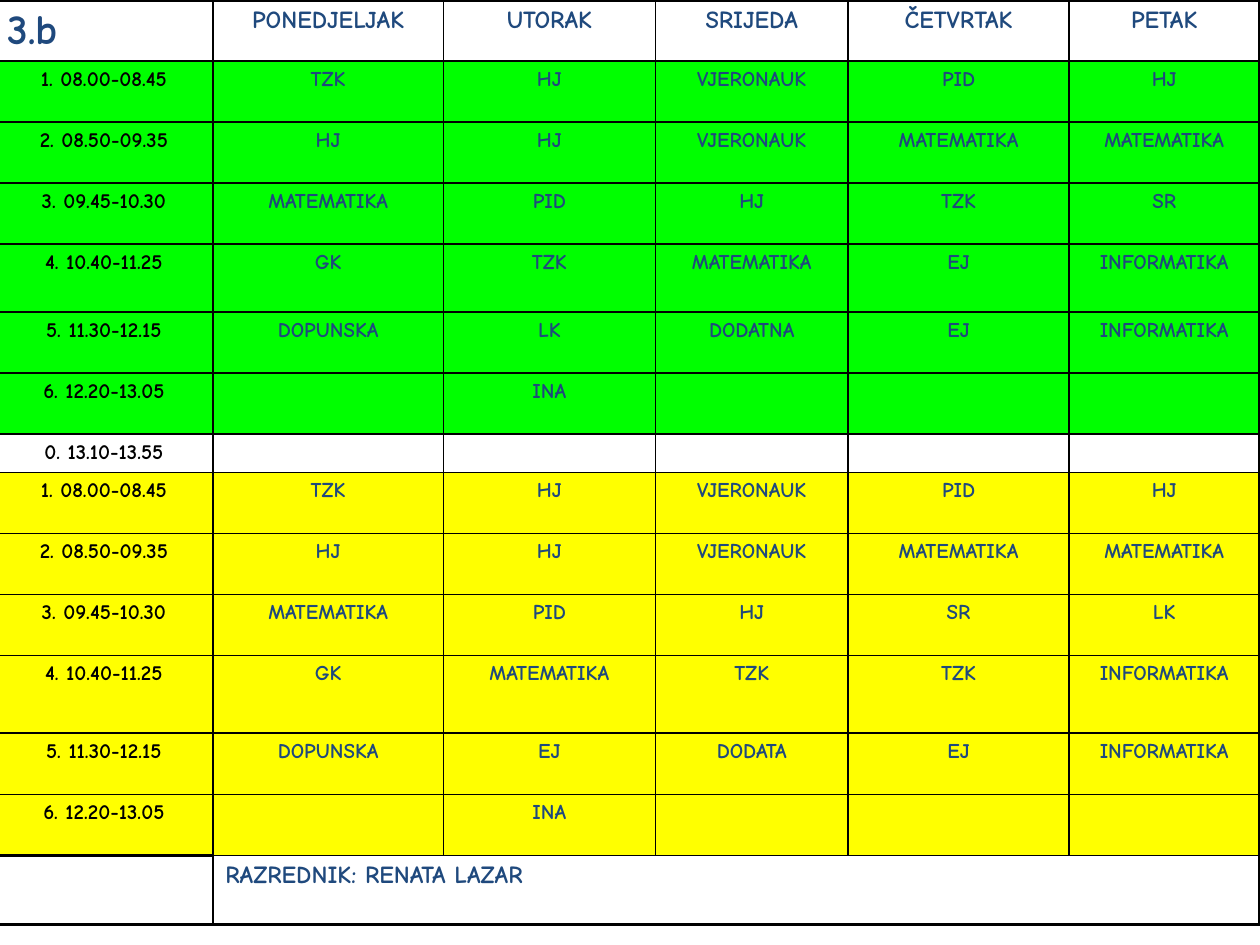
from pptx import Presentation
from pptx import util as u
from pptx.dml.color import RGBColor
from pptx.enum import text
from pptx.oxml import parse_xml
from pptx.oxml.ns import nsdecls

COLORS = {"ink": "1F497D", "black": "000000", "morning": "00FF00", "second": "FFFF00"}
THIN, THICK = 1, 2.25

DAYS = ["PONEDJELJAK", "UTORAK", "SRIJEDA", "ČETVRTAK", "PETAK"]
HOURS = ["1. 08.00-08.45", "2. 08.50-09.35", "3. 09.45-10.30",
         "4. 10.40-11.25", "5. 11.30-12.15", "6. 12.20-13.05"]
GREEN_WEEK = [
    ["TZK", "HJ", "VJERONAUK", "PID", "HJ"],
    ["HJ", "HJ", "VJERONAUK", "MATEMATIKA", "MATEMATIKA"],
    ["MATEMATIKA", "PID", "HJ", "TZK", "SR"],
    ["GK", "TZK", "MATEMATIKA", "EJ", "INFORMATIKA"],
    ["DOPUNSKA", "LK", "DODATNA", "EJ", "INFORMATIKA"],
    ["", "INA", "", "", ""],
]
YELLOW_WEEK = [
    ["TZK", "HJ", "VJERONAUK", "PID", "HJ"],
    ["HJ", "HJ", "VJERONAUK", "MATEMATIKA", "MATEMATIKA"],
    ["MATEMATIKA", "PID", "HJ", "SR", "LK"],
    ["GK", "MATEMATIKA", "TZK", "TZK", "INFORMATIKA"],
    ["DOPUNSKA", "EJ", "DODATA", "EJ", "INFORMATIKA"],
    ["", "INA", "", "", ""],
]
DAY_WIDTHS = [4.39, 4.65, 4.27, 3.89, 4.45, 3.84]
LESSON_HEIGHT = 1.23
SPECIAL_HEIGHTS = {4: 1.37, 7: 0.74, 11: 1.57, 14: 1.4}


class Timetable:
    """Holds the text style and the current slide."""

    font = "Comic Neue"

    def __init__(self, slide):
        self.slide = slide

    def add_grid(self, left, top, widths, heights):
        frame = self.slide.shapes.add_table(
            len(heights), len(widths), u.Cm(left), u.Cm(top),
            u.Cm(sum(widths)), u.Cm(sum(heights)))
        grid = frame.table
        grid.first_row = grid.horz_banding = False
        for column, width in zip(grid.columns, widths):
            column.width = u.Cm(width)
        for row, height in zip(grid.rows, heights):
            row.height = u.Cm(height)
        return grid

    def add_borders(self, cell, widths):
        """Draw the cell's sides; widths maps L, R, T, B to points."""
        properties = cell._tc.get_or_add_tcPr()
        for side in "LRTB":
            properties.append(parse_xml(
                f'<a:ln{side} {nsdecls("a")} w="{u.Pt(widths[side])}"><a:solidFill>'
                f'<a:srgbClr val="{COLORS["black"]}"/></a:solidFill></a:ln{side}>'))

    def fill_cell(self, cell, color=None):
        if color:
            cell.fill.solid()
            cell.fill.fore_color.rgb = RGBColor.from_string(COLORS[color])
        else:
            cell.fill.background()

    def add_words(self, cell, words, size=12, color="ink", align=text.PP_ALIGN.CENTER):
        paragraph = cell.text_frame.paragraphs[0]
        paragraph.alignment = align
        if not words:
            # The end mark's size keeps an empty cell from stretching its row.
            paragraph._p.append(parse_xml(
                f'<a:endParaRPr {nsdecls("a")} sz="{size * 100}"/>'))
            return
        run = paragraph.add_run()
        run.text = words
        for name, value in {"name": self.font, "size": u.Pt(size), "bold": True}.items():
            setattr(run.font, name, value)
        run.font.color.rgb = RGBColor.from_string(COLORS[color])


def main():
    prs = Presentation()
    prs.slide_width, prs.slide_height = u.Cm(25.4), u.Cm(19.05)
    timetable = Timetable(prs.slides.add_slide(prs.slide_layouts[6]))

    rows = [(None, ["3.b"] + DAYS)]
    rows += [("morning", [hour] + lessons) for hour, lessons in zip(HOURS, GREEN_WEEK)]
    rows.append((None, ["0. 13.10-13.55"] + [""] * 5))
    rows += [("second", [hour] + lessons) for hour, lessons in zip(HOURS, YELLOW_WEEK)]
    rows.append((None, ["", "RAZREDNIK: RENATA LAZAR"] + [""] * 4))

    heights = [SPECIAL_HEIGHTS.get(r, LESSON_HEIGHT) for r in range(len(rows))]
    grid = timetable.add_grid(-0.1, 0, DAY_WIDTHS, heights)
    last_row, last_day = len(rows) - 1, len(DAYS)
    grid.cell(last_row, 1).merge(grid.cell(last_row, last_day))

    for r, (band, entries) in enumerate(rows):
        for c, words in enumerate(entries):
            cell = grid.cell(r, c)
            thick = {
                "L": c == 0,
                "R": c == last_day or cell.is_merge_origin,
                "T": r == 0 or (r == last_row and c == 0),
                "B": r == last_row or (r == last_row - 1 and c == 0),
            }
            timetable.add_borders(cell, {s: THICK if on else THIN for s, on in thick.items()})
            timetable.fill_cell(cell, band)
            style = {}
            if r in (0, last_row):
                style["size"] = 14
            elif c == 0:
                style["color"] = "black"
            if r == 0 and c == 0:
                style["size"] = 24
            if (r, c) in ((0, 0), (last_row, 1)):
                style["align"] = text.PP_ALIGN.LEFT
            timetable.add_words(cell, words, **style)

    prs.save("out.pptx")


if __name__ == "__main__":
    main()
